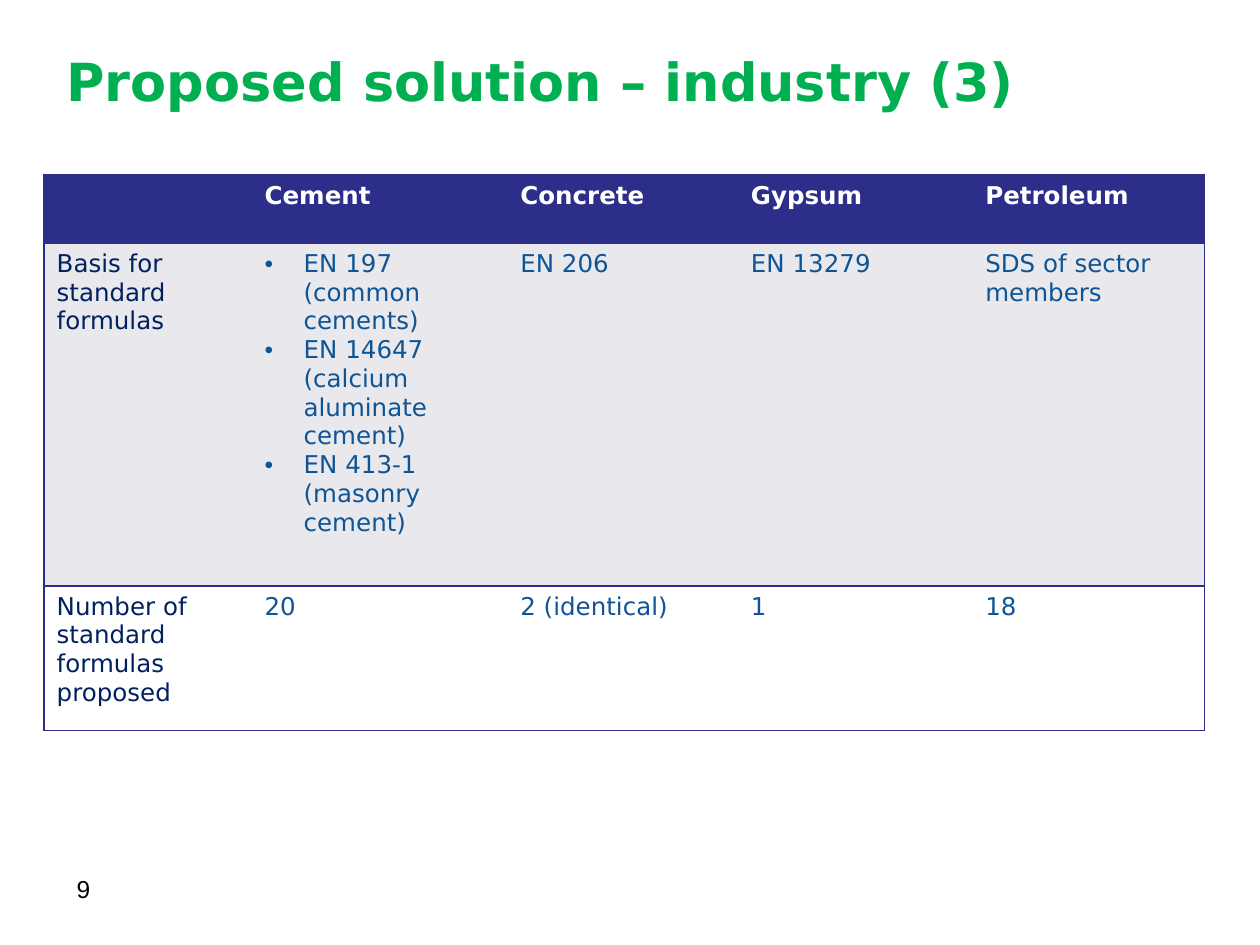
"""Build the slide on standard formulas proposed by industry sectors."""
from dataclasses import dataclass

from lxml import etree
from pptx import Presentation
from pptx import util as u
from pptx.dml.color import RGBColor
from pptx.enum import text
from pptx.oxml.ns import qn


@dataclass(frozen=True)
class Theme:
    title: str = "00B050"
    rule: str = "2D2D8A"
    band: str = "E8E8ED"
    paper: str = "FFFFFF"
    label: str = "002060"
    body: str = "0F5494"
    ink: str = "000000"
    font: str = "DejaVu Sans"
    number_font: str = "Arial"
    title_size: int = 30
    body_size: int = 14


class SlideBuilder:
    COLUMNS, ROWS = 100, 75

    def __init__(self, deck, theme):
        self.theme = theme
        self.page = deck.slides.add_slide(deck.slide_layouts[6])
        self.column = deck.slide_width / self.COLUMNS
        self.row = deck.slide_height / self.ROWS

    def place(self, left, top, width, height):
        return (u.Emu(round(left * self.column)), u.Emu(round(top * self.row)),
                u.Emu(round(width * self.column)), u.Emu(round(height * self.row)))

    def add_span(self, para, wording, color, size=None, font=None, bold=False):
        span = para.add_run()
        span.text = wording
        span.font.name = font or self.theme.font
        span.font.size = u.Pt(size or self.theme.body_size)
        span.font.bold = bold
        span.font.color.rgb = RGBColor.from_string(color)

    def label(self, area, wording, color, anchor=text.MSO_ANCHOR.TOP, **style):
        box = self.page.shapes.add_textbox(*self.place(*area))
        box.text_frame.word_wrap = True
        box.text_frame.vertical_anchor = anchor
        self.add_span(box.text_frame.paragraphs[0], wording, color, **style)

    def bullet(self, para):
        properties = para._p.get_or_add_pPr()
        indent = round(3.1 * self.column)
        properties.set("marL", str(indent))
        properties.set("indent", str(-indent))
        etree.SubElement(properties, qn("a:buFont"), typeface="Arial")
        etree.SubElement(properties, qn("a:buChar"), char="•")

    def border(self, cell, ruled_sides):
        properties = cell._tc.get_or_add_tcPr()
        for side in "LRTB":
            line = etree.SubElement(properties, qn(f"a:ln{side}"), w=str(u.Pt(1)))
            if side in ruled_sides:
                fill = etree.SubElement(line, qn("a:solidFill"))
                etree.SubElement(fill, qn("a:srgbClr"), val=self.theme.rule)
            else:
                etree.SubElement(line, qn("a:noFill"))

    def cell(self, cell, content, fill, color, ruled_sides, bold):
        self.border(cell, ruled_sides)
        cell.fill.solid()
        cell.fill.fore_color.rgb = RGBColor.from_string(fill)
        items = content if isinstance(content, list) else [content]
        for index, wording in enumerate(items):
            frame = cell.text_frame
            para = frame.add_paragraph() if index else frame.paragraphs[0]
            if isinstance(content, list):
                self.bullet(para)
            para.font.size = u.Pt(self.theme.body_size)
            if wording:
                self.add_span(para, wording, color, bold=bold)

    def table(self, left, top, widths, heights, content):
        theme = self.theme
        area = self.place(left, top, sum(widths), sum(heights))
        table = self.page.shapes.add_table(len(heights), len(widths), *area).table
        for column, width in zip(table.columns, widths):
            column.width = u.Emu(round(width * self.column))
        for row, height in zip(table.rows, heights):
            row.height = u.Emu(round(height * self.row))
        fills = (theme.rule, theme.band, theme.paper)
        for r, (line, fill) in enumerate(zip(content, fills)):
            for c, wording in enumerate(line):
                sides = "TB" + "L" * (c == 0) + "R" * (c == len(widths) - 1)
                color = theme.paper if r == 0 else theme.body if c else theme.label
                self.cell(table.cell(r, c), wording, fill, color, sides, r == 0)


def main():
    theme = Theme()
    deck = Presentation()
    deck.slide_width, deck.slide_height = u.Inches(10), u.Inches(7.5)
    slide = SlideBuilder(deck, theme)
    slide.label((4.3, 1.3, 90, 10.2), "Proposed solution – industry (3)", theme.title,
                anchor=text.MSO_ANCHOR.MIDDLE, size=theme.title_size, bold=True)
    slide.table(3.5, 13.9, (16.5, 20.3, 18.3, 18.6, 18.4), (5.4, 27.2, 11.5), [
        ["", "Cement", "Concrete", "Gypsum", "Petroleum"],
        ["Basis for standard formulas",
         ["EN 197 (common cements)",
          "EN 14647 (calcium aluminate cement)",
          "EN 413-1 (masonry cement)"],
         "EN 206", "EN 13279", "SDS of sector members"],
        ["Number of standard formulas proposed", "20", "2 (identical)", "1", "18"],
    ])
    slide.label((5.1, 68.9, 23.3, 5.2), "9", theme.ink, font=theme.number_font)
    deck.save("out.pptx")


if __name__ == "__main__":
    main()
